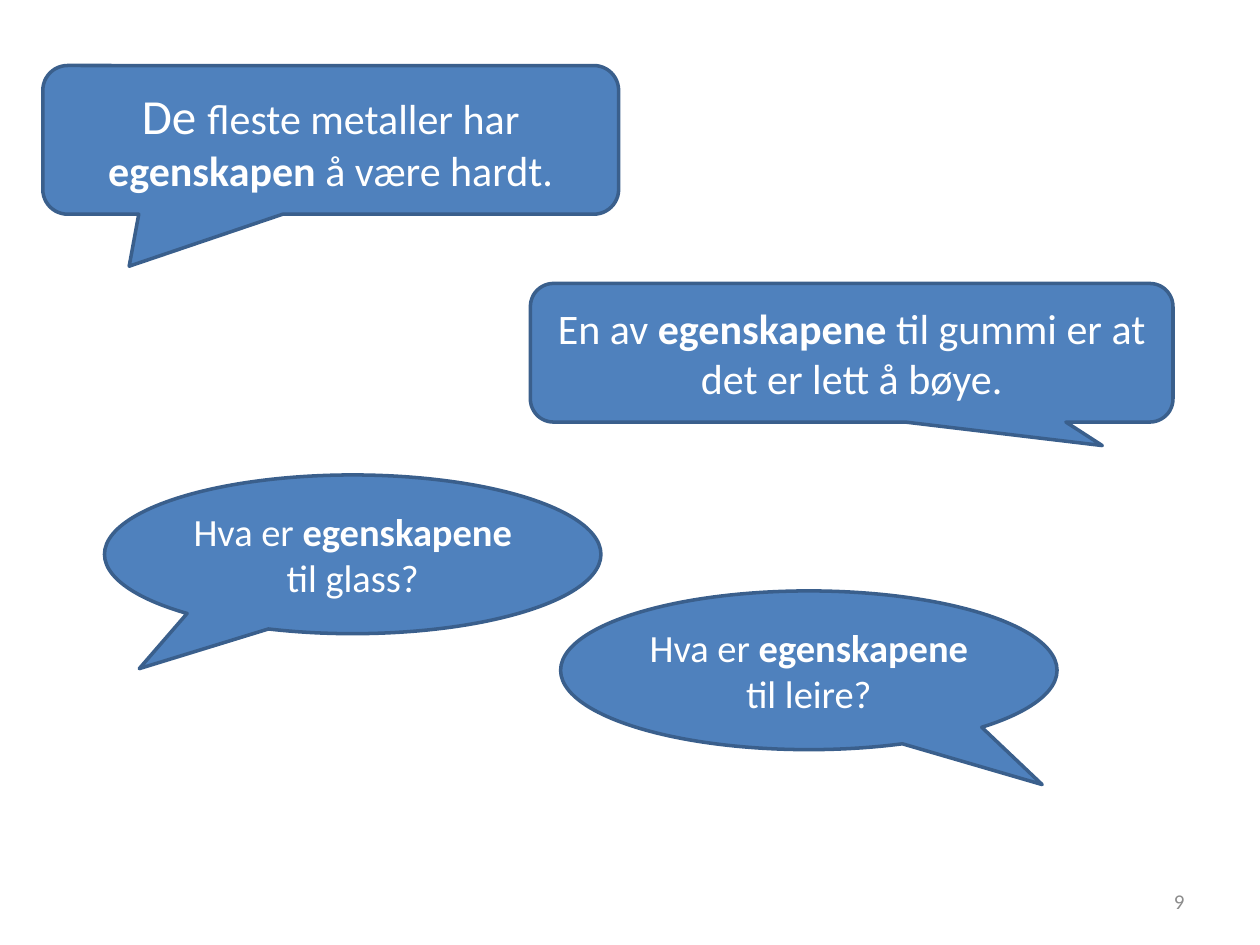
from collections import namedtuple
from dataclasses import dataclass

from pptx import Presentation, util as u
from pptx.dml.color import RGBColor
from pptx.enum import shapes, text

Box = namedtuple("Box", "left top width height")


@dataclass(frozen=True)
class Theme:
    font: str = "Calibri"
    bubble_fill: str = "4F81BD"
    bubble_line: str = "3A5F8C"
    bubble_text: str = "FFFFFF"
    number_text: str = "8C8C8C"
    line_width: float = 2
    lead_size: int = 28
    statement_size: int = 24
    question_size: int = 22
    number_size: int = 12


THEME = Theme()
SLIDE_WIDTH, SLIDE_HEIGHT = u.Inches(10), u.Inches(7.5)
COLUMNS, ROWS = 100, 75
ROUNDED = shapes.MSO_SHAPE.ROUNDED_RECTANGULAR_CALLOUT
OVAL = shapes.MSO_SHAPE.OVAL_CALLOUT


def place(box):
    """Turn a box in grid columns and rows into slide lengths."""
    column, row = SLIDE_WIDTH / COLUMNS, SLIDE_HEIGHT / ROWS
    return [round(share * unit) for share, unit in zip(box, (column, row, column, row))]


def add_run(paragraph, content, *, size, color, bold=False):
    run = paragraph.add_run()
    run.text = content
    run.font.name = THEME.font
    run.font.size = u.Pt(size)
    run.font.bold = bold
    run.font.color.rgb = RGBColor.from_string(color)


def add_bubble(slide, box, kind, tail, runs):
    """Add a callout; tail is its tip measured from the centre in shares of the box."""
    shape = slide.shapes.add_shape(kind, *place(box))
    shape.shadow.inherit = False
    for index, share in enumerate(tail):
        shape.adjustments[index] = share
    shape.fill.solid()
    shape.fill.fore_color.rgb = RGBColor.from_string(THEME.bubble_fill)
    shape.line.color.rgb = RGBColor.from_string(THEME.bubble_line)
    shape.line.width = u.Pt(THEME.line_width)
    frame = shape.text_frame
    frame.word_wrap = True
    frame.vertical_anchor = text.MSO_ANCHOR.MIDDLE
    paragraph = frame.paragraphs[0]
    paragraph.alignment = text.PP_ALIGN.CENTER
    for content, size, bold in runs:
        add_run(paragraph, content, size=size, color=THEME.bubble_text, bold=bold)


def add_statement(slide, box, tail, lead, opening, keyword, ending):
    size = THEME.statement_size
    runs = [(lead, THEME.lead_size, False)] if lead else []
    runs += [(opening, size, False), (keyword, size, True), (ending, size, False)]
    add_bubble(slide, box, ROUNDED, tail, runs)


def add_question(slide, box, tail, material):
    size = THEME.question_size
    add_bubble(slide, box, OVAL, tail, [
        ("Hva er ", size, False),
        ("egenskapene", size, True),
        (f" til {material}?", size, False),
    ])


def add_page_number(slide, box, number):
    frame = slide.shapes.add_textbox(*place(box)).text_frame
    frame.word_wrap = True
    frame.vertical_anchor = text.MSO_ANCHOR.MIDDLE
    paragraph = frame.paragraphs[0]
    paragraph.alignment = text.PP_ALIGN.RIGHT
    add_run(paragraph, str(number), size=THEME.number_size, color=THEME.number_text)


def main():
    presentation = Presentation()
    presentation.slide_width, presentation.slide_height = SLIDE_WIDTH, SLIDE_HEIGHT
    slide = presentation.slides.add_slide(presentation.slide_layouts[6])

    add_statement(slide, Box(3.4, 5.2, 45.7, 11.8), (-0.35, 0.85),
                  "De ", "fleste metaller har ", "egenskapen", " å være hardt.")
    add_statement(slide, Box(42.1, 22.5, 51, 11), (0.39, 0.67),
                  "", "En av ", "egenskapene", " til gummi er at det er lett å bøye.")
    add_page_number(slide, Box(71.7, 69.5, 23.3, 4), 9)
    add_question(slide, Box(8.3, 37.7, 39.4, 12.6), (-0.43, 0.72), "glass")
    add_question(slide, Box(44.5, 46.9, 39.4, 12.6), (0.47, 0.72), "leire")

    presentation.save("out.pptx")


if __name__ == "__main__":
    main()
